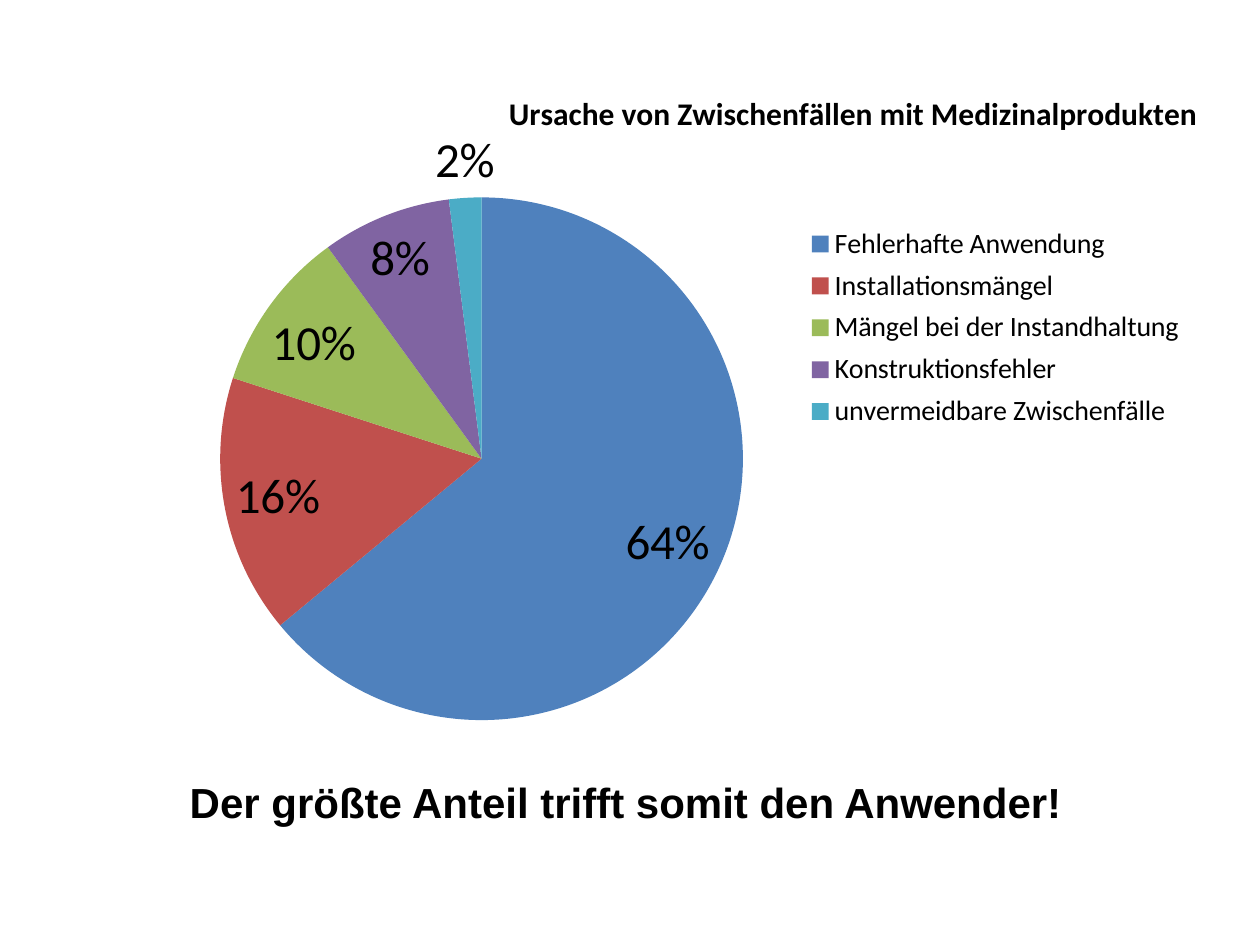
import pptx
import pptx.chart.data
import pptx.dml.color
import pptx.enum.chart
import pptx.enum.text
import pptx.oxml
import pptx.oxml.ns
import pptx.util

Pt = pptx.util.Pt

TITLE = "Ursache von Zwischenfällen mit Medizinalprodukten"
CONCLUSION = "Der größte Anteil trifft somit den Anwender!"
CAUSES = [
    ("Fehlerhafte Anwendung", 64, "blue"),
    ("Installationsmängel", 16, "red"),
    ("Mängel bei der Instandhaltung", 10, "green"),
    ("Konstruktionsfehler", 8, "purple"),
    ("unvermeidbare Zwischenfälle", 2, "teal"),
]
COLORS = {
    "text": "000000", "blue": "4F81BD", "red": "C0504D",
    "green": "9BBB59", "purple": "8064A2", "teal": "4BACC6",
}
CHART_BOX = (20, 21, 686, 401)
CONCLUSION_BOX = (20, 440, 675, 36)
# Places inside the chart, as fractions of its width and height
TITLE_PLACE = {"x": 0.39, "y": 0.07}
LEGEND_PLACE = {"x": 0.63, "y": 0.26, "w": 0.34, "h": 0.31}
PIE_PLACE = {"x": 0.154, "y": 0.229, "w": 0.436, "h": 0.745}


def color(name):
    return pptx.dml.color.RGBColor.from_string(COLORS[name])


def format_font(font, **values):
    for name, value in values.items():
        setattr(font, name, value)
    font.color.rgb = color("text")


def place(element, index, fractions, target=""):
    """Give a chart part a manual layout, as its child number index."""
    for layout in element.findall(pptx.oxml.ns.qn("c:layout")):
        element.remove(layout)
    modes = "".join(f'<c:{key}Mode val="edge"/>' for key in fractions if key in "xy")
    values = "".join(f'<c:{key} val="{value}"/>' for key, value in fractions.items())
    element.insert(index, pptx.oxml.parse_xml(
        f'<c:layout {pptx.oxml.ns.nsdecls("c")}><c:manualLayout>'
        f'{target}{modes}{values}</c:manualLayout></c:layout>'))


def add_cause_chart(slide):
    data = pptx.chart.data.CategoryChartData(number_format="General")
    data.categories = [cause for cause, _, _ in CAUSES]
    data.add_series("Series 1", [share for _, share, _ in CAUSES])
    chart = slide.shapes.add_chart(
        pptx.enum.chart.XL_CHART_TYPE.PIE, *map(Pt, CHART_BOX), data).chart
    format_font(chart.font, name="Calibri", size=Pt(11))

    chart.has_title = True
    chart.chart_title.text_frame.text = TITLE
    title_run = chart.chart_title.text_frame.paragraphs[0].runs[0]
    format_font(title_run.font, name="Calibri", size=Pt(18), bold=True)

    chart.has_legend = True
    chart.legend.position = pptx.enum.chart.XL_LEGEND_POSITION.RIGHT
    chart.legend.include_in_layout = False
    format_font(chart.legend.font, name="Calibri", size=Pt(16))

    plot = chart.plots[0]
    plot.vary_by_categories = True
    for index, (_, _, name) in enumerate(CAUSES):
        fill = plot.series[0].points[index].format.fill
        fill.solid()
        fill.fore_color.rgb = color(name)

    plot.has_data_labels = True
    label_format = {
        "show_percentage": True, "show_value": False,
        "number_format": "0%", "number_format_is_linked": False,
        "position": pptx.enum.chart.XL_LABEL_POSITION.BEST_FIT,
    }
    for name, value in label_format.items():
        setattr(plot.data_labels, name, value)
    format_font(plot.data_labels.font, name="Calibri", size=Pt(28))

    place(chart.chart_title._element, 1, TITLE_PLACE)
    place(chart.legend._element, 1, LEGEND_PLACE)
    place(plot._element.getparent(), 0, PIE_PLACE, '<c:layoutTarget val="inner"/>')


def add_conclusion(slide):
    frame = slide.shapes.add_textbox(*map(Pt, CONCLUSION_BOX)).text_frame
    frame.word_wrap = True
    frame.auto_size = pptx.enum.text.MSO_AUTO_SIZE.SHAPE_TO_FIT_TEXT
    paragraph = frame.paragraphs[0]
    paragraph.alignment = pptx.enum.text.PP_ALIGN.CENTER
    run = paragraph.add_run()
    run.text = CONCLUSION
    format_font(run.font, name="Arial", size=Pt(24), bold=True)


def main():
    presentation = pptx.Presentation()
    presentation.slide_width, presentation.slide_height = Pt(720), Pt(540)
    slide = presentation.slides.add_slide(presentation.slide_layouts[6])
    add_conclusion(slide)
    add_cause_chart(slide)
    presentation.save("out.pptx")


if __name__ == "__main__":
    main()
